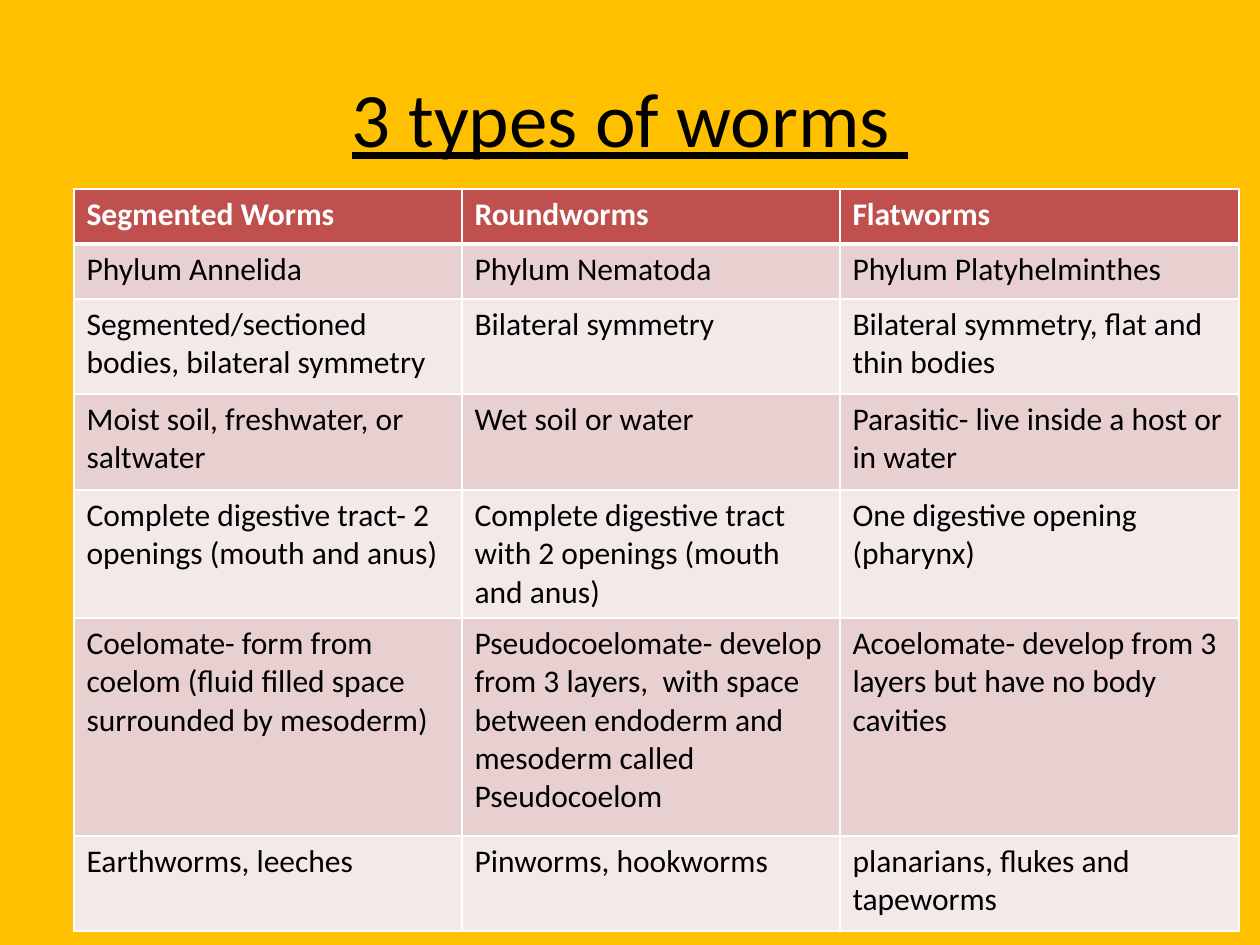
"""Build a slide comparing three types of worms in a table."""
from dataclasses import dataclass

from lxml.etree import SubElement
from pptx import Presentation
from pptx.dml.color import RGBColor
from pptx.enum.text import MSO_ANCHOR, PP_ALIGN
from pptx.oxml.ns import qn
from pptx.util import Pt

PX = 914400 // 126


@dataclass(frozen=True)
class Theme:
    font: str = "Calibri"
    background: str = "FFC000"
    header: str = "C0504D"
    bands: tuple = ("F4E9E9", "E8D0D0")
    light: str = "FFFFFF"
    dark: str = "000000"
    title_size: int = 44
    body_size: int = 18
    thin: int = 1
    thick: int = 3


theme = Theme()


def format_runs(paragraph, size, color, bold=False, underline=False):
    for run in paragraph.runs:
        run.font.name = theme.font
        run.font.size = Pt(size)
        run.font.color.rgb = RGBColor.from_string(color)
        run.font.bold = bold
        run.font.underline = underline


def set_borders(cell, top, bottom):
    properties = cell._tc.get_or_add_tcPr()
    widths = {"L": theme.thin, "R": theme.thin, "T": top, "B": bottom}
    for side, width in widths.items():
        line = SubElement(properties, qn(f"a:ln{side}"), w=str(Pt(width)))
        fill = SubElement(line, qn("a:solidFill"))
        SubElement(fill, qn("a:srgbClr"), val=theme.light)


presentation = Presentation()
presentation.slide_width = 1260 * PX
presentation.slide_height = 945 * PX
slide = presentation.slides.add_slide(presentation.slide_layouts[5])
slide.background.fill.solid()
slide.background.fill.fore_color.rgb = RGBColor.from_string(theme.background)

title = slide.shapes.title
title.left, title.top, title.width, title.height = (
    value * PX for value in (63, 38, 1134, 158)
)
title.text_frame.text = "3 types of worms "
title.text_frame.vertical_anchor = MSO_ANCHOR.MIDDLE
title_paragraph = title.text_frame.paragraphs[0]
title_paragraph.alignment = PP_ALIGN.CENTER
format_runs(title_paragraph, theme.title_size, theme.dark, underline=True)

worm_rows = [
    ("Segmented Worms", "Roundworms", "Flatworms"),
    ("Phylum Annelida", "Phylum Nematoda", "Phylum Platyhelminthes"),
    (
        "Segmented/sectioned bodies, bilateral symmetry",
        "Bilateral symmetry",
        "Bilateral symmetry, flat and thin bodies",
    ),
    (
        "Moist soil, freshwater, or saltwater",
        "Wet soil or water",
        "Parasitic- live inside a host or in water",
    ),
    (
        "Complete digestive tract- 2 openings (mouth and anus)",
        "Complete digestive tract with 2 openings (mouth and anus)",
        "One digestive opening (pharynx)",
    ),
    (
        "Coelomate- form from coelom (fluid filled space surrounded by mesoderm)",
        "Pseudocoelomate- develop from 3 layers,  with space between endoderm "
        "and mesoderm called Pseudocoelom",
        "Acoelomate- develop from 3 layers but have no body cavities",
    ),
    ("Earthworms, leeches", "Pinworms, hookworms", "planarians, flukes and tapeworms"),
]
column_widths = (388, 378, 399)
row_heights = (55, 55, 95, 96, 96, 218, 95)

table = slide.shapes.add_table(
    len(worm_rows),
    len(column_widths),
    74 * PX,
    189 * PX,
    sum(column_widths) * PX,
    sum(row_heights) * PX,
).table
for column, width in zip(table.columns, column_widths):
    column.width = width * PX
for row, height in zip(table.rows, row_heights):
    row.height = height * PX

for row_index, texts in enumerate(worm_rows):
    is_header = row_index == 0
    fill_color = theme.header if is_header else theme.bands[row_index % 2]
    text_color = theme.light if is_header else theme.dark
    top = theme.thick if row_index == 1 else theme.thin
    bottom = theme.thick if is_header else theme.thin
    for column_index, text in enumerate(texts):
        cell = table.cell(row_index, column_index)
        cell.text_frame.text = text
        format_runs(
            cell.text_frame.paragraphs[0], theme.body_size, text_color, bold=is_header
        )
        set_borders(cell, top, bottom)
        cell.fill.solid()
        cell.fill.fore_color.rgb = RGBColor.from_string(fill_color)

presentation.save("out.pptx")
